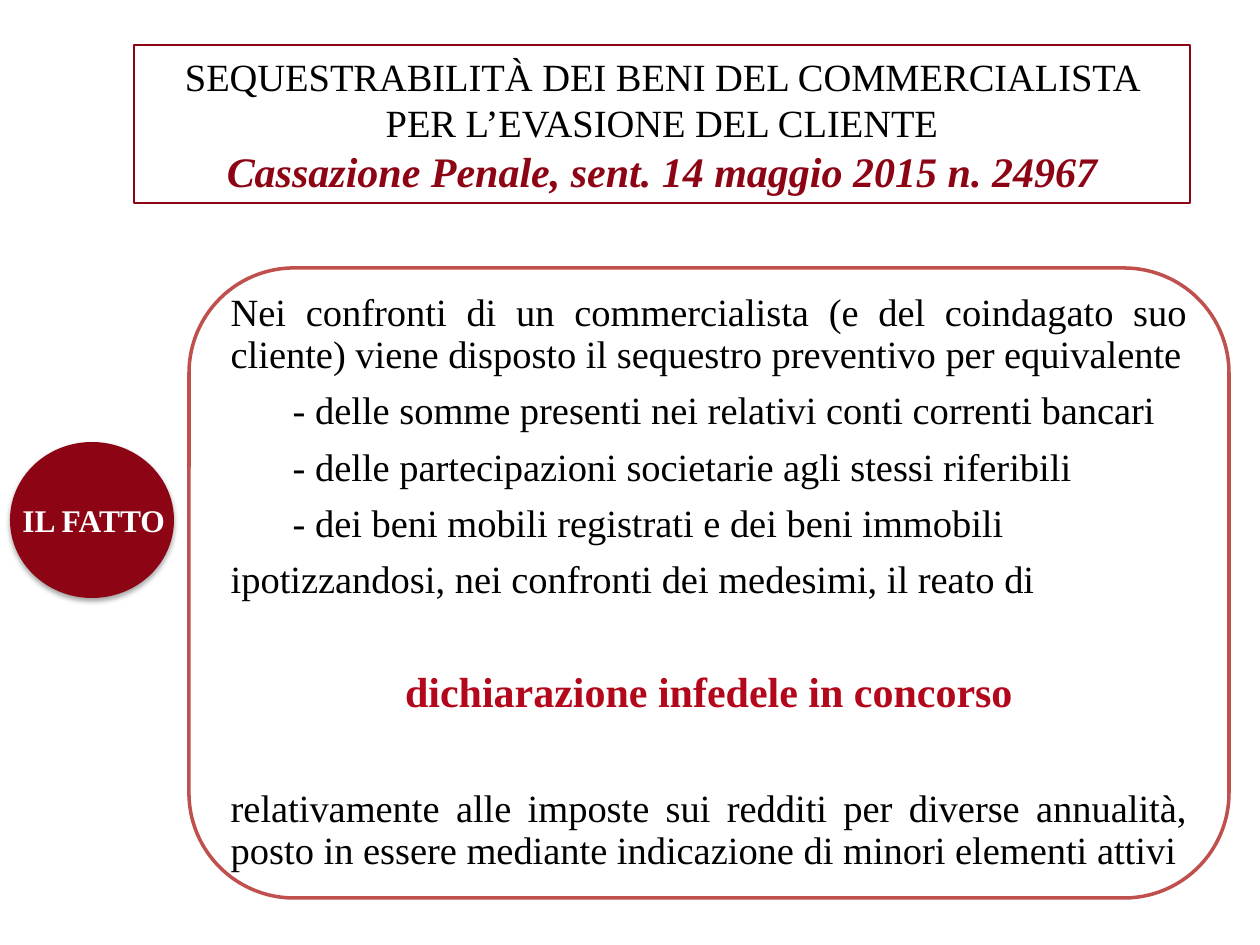
from dataclasses import dataclass

from lxml import etree
from pptx import Presentation
from pptx import util as u
from pptx.dml.color import RGBColor
from pptx.enum import shapes, text
from pptx.oxml import ns

EMU_PER_PX = 914400 / 126
FONT = "Times New Roman"
COLORS = {
    "maroon": "8D0515",
    "red": "B3071B",
    "border": "C0504D",
    "black": "000000",
    "white": "FFFFFF",
}
JUSTIFY, CENTER, LEFT = text.PP_ALIGN.JUSTIFY, text.PP_ALIGN.CENTER, text.PP_ALIGN.LEFT


@dataclass
class Box:
    left: int
    top: int
    width: int
    height: int

    def emu(self) -> list[int]:
        return [px(v) for v in (self.left, self.top, self.width, self.height)]


@dataclass
class Para:
    words: str
    size: int = 22
    color: str = "black"
    align: text.PP_ALIGN = JUSTIFY
    bold: bool = False
    italic: bool = False
    indent: int = 0
    before: float = 0


TITLE = [
    Para("SEQUESTRABILITÀ DEI BENI DEL COMMERCIALISTA PER L’EVASIONE DEL CLIENTE",
         align=CENTER),
    Para("Cassazione Penale, sent. 14 maggio 2015 n. 24967", 24, "maroon", CENTER,
         bold=True, italic=True),
]
SEIZED = [
    "- delle somme presenti nei relativi conti correnti bancari",
    "- delle partecipazioni societarie agli stessi riferibili",
    "- dei beni mobili registrati e dei beni immobili",
]
FACTS = [
    Para("Nei confronti di un commercialista (e del coindagato suo cliente) "
         "viene disposto il sequestro preventivo per equivalente"),
    *[Para(item, indent=62) for item in SEIZED],
    Para("ipotizzandosi, nei confronti dei medesimi, il reato di"),
    Para("dichiarazione infedele in concorso", 24, "red", CENTER, bold=True, before=31),
    Para("relativamente alle imposte sui redditi per diverse annualità, posto in "
         "essere mediante indicazione di minori elementi attivi", before=33),
]
LABEL = [Para("IL FATTO", 18, "white", LEFT, bold=True)]


def px(value: int) -> int:
    return round(value * EMU_PER_PX)


def rgb(name: str) -> RGBColor:
    return RGBColor.from_string(COLORS[name])


def add_outline(s, kind, box: Box, fill: str = "", line: str = "", width: float = 1):
    """Add a preset shape; an empty fill or line name means none."""
    sp = s.shapes.add_shape(kind, *box.emu())
    sp.shadow.inherit = False
    if fill:
        sp.fill.solid()
        sp.fill.fore_color.rgb = rgb(fill)
    else:
        sp.fill.background()
    if line:
        sp.line.color.rgb = rgb(line)
        sp.line.width = u.Pt(width)
    else:
        sp.line.fill.background()
    return sp


def add_drop_shadow(sp) -> None:
    effects = sp._element.spPr.find(ns.qn("a:effectLst"))
    shadow = etree.SubElement(
        effects, ns.qn("a:outerShdw"), blurRad=str(u.Pt(3.1)), dist=str(u.Pt(1.8)),
        dir="5400000", rotWithShape="0")
    color = etree.SubElement(shadow, ns.qn("a:srgbClr"), val=COLORS["black"])
    etree.SubElement(color, ns.qn("a:alpha"), val="35000")


def write(sp, paras: list[Para], anchor, line_spacing: float = 1, after: float = 0) -> None:
    tf = sp.text_frame
    tf.word_wrap = True
    tf.vertical_anchor = anchor
    for i, para in enumerate(paras):
        p = tf.add_paragraph() if i else tf.paragraphs[0]
        p.text = para.words
        p.alignment = para.align
        p.line_spacing = line_spacing
        p.space_before, p.space_after = u.Pt(para.before), u.Pt(after)
        if para.indent:
            p._p.get_or_add_pPr().set("marL", str(px(para.indent)))
        p.font.name, p.font.size = FONT, u.Pt(para.size)
        p.font.bold, p.font.italic = para.bold, para.italic
        p.font.color.rgb = rgb(para.color)


def main() -> None:
    prs = Presentation()
    prs.slide_width, prs.slide_height = px(1260), px(945)
    s = prs.slides.add_slide(prs.slide_layouts[6])
    middle, top = text.MSO_ANCHOR.MIDDLE, text.MSO_ANCHOR.TOP

    circle = add_outline(s, shapes.MSO_SHAPE.OVAL, Box(10, 442, 164, 156), "maroon")
    add_drop_shadow(circle)
    label = s.shapes.add_textbox(*Box(10, 495, 179, 50).emu())
    write(label, LABEL, top)

    panel = add_outline(s, shapes.MSO_SHAPE.ROUNDED_RECTANGLE,
                        Box(189, 268, 1040, 630), "white", "border", 2)
    tf = panel.text_frame
    tf.margin_left = tf.margin_right = tf.margin_top = tf.margin_bottom = px(11)
    write(panel, FACTS, middle, line_spacing=0.9, after=8.5)

    title = add_outline(s, shapes.MSO_SHAPE.RECTANGLE, Box(134, 45, 1056, 158),
                        line="maroon", width=1.5)
    write(title, TITLE, middle)
    prs.save("out.pptx")


if __name__ == "__main__":
    main()
